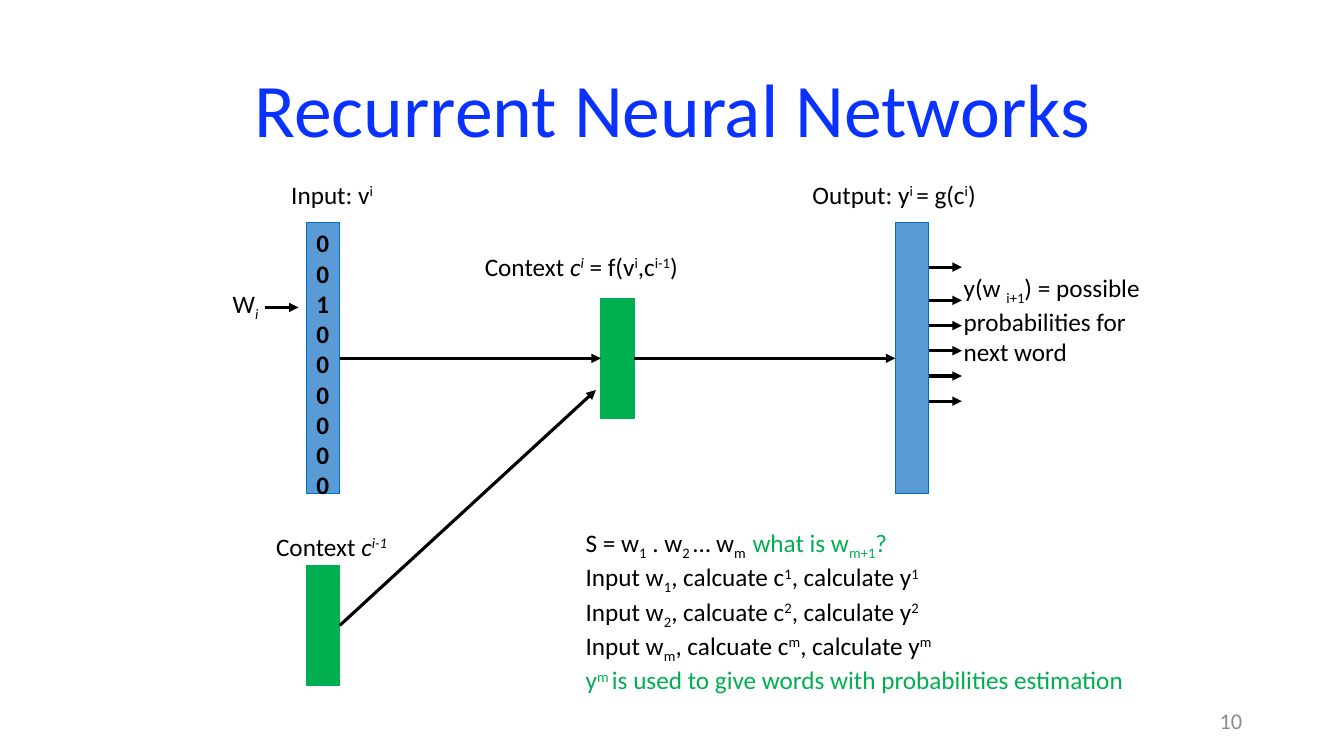
"""Build the Recurrent Neural Networks slide."""
from dataclasses import dataclass

from lxml.etree import SubElement
from pptx import Presentation
from pptx.dml.color import RGBColor
from pptx.enum.shapes import MSO_CONNECTOR, MSO_SHAPE
from pptx.enum.text import MSO_ANCHOR, MSO_AUTO_SIZE, PP_ALIGN
from pptx.oxml.ns import qn
from pptx.util import Pt

PX = 9144
RIGHT, LEFT = 3, 1


@dataclass(frozen=True)
class Theme:
    font: str = "Calibri"
    black: str = "000000"
    title: str = "0A32FF"
    muted: str = "8C8C8C"
    blue: str = "5B9BD5"
    blue_edge: str = "0070C0"
    green: str = "00B050"
    title_size: int = 54
    number_size: int = 16
    body_size: int = 18
    bar_line: float = 0.75
    arrow_line: float = 2.25


T = Theme()
STYLES = {
    "sup": {"base": 30000},
    "sub": {"base": -25000},
    "it": {"italic": True},
    "it sup": {"italic": True, "base": 30000},
    "it sub": {"italic": True, "base": -25000},
    "green": {"color": T.green},
    "green sup": {"color": T.green, "base": 30000},
    "green sub": {"color": T.green, "base": -25000},
    "bold": {"bold": True},
    "title": {"color": T.title, "size": T.title_size},
    "number": {"color": T.muted, "size": T.number_size},
}

TITLE = [[("Recurrent Neural Networks", "title")]]
PAGE = [[("10", "number")]]
TITLE_BOX = (92, 40, 1150, 145)
PAGE_BOX = (942, 695, 300, 40)

INPUT_VECTOR = [[(digits, "bold")] for digits in ("0", "0", "1", "0", "00", "000")]
BAR_W = 33
BARS = {
    "input": (304, 221, 269, T.blue, T.blue_edge),
    "output": (888, 221, 269, T.blue, T.blue_edge),
    "context": (596, 296, 119, T.green, T.green),
    "previous": (304, 561, 119, T.green, T.green),
}
FLOWS = [("input", "context"), ("context", "output")]
CONTEXT_TIP = (591, 387)
WORD_ARROW = (263, 305)
ARROW_W = 33
OUTPUT_ROWS = [265] + [298 + 25 * i for i in range(5)]


def step(n):
    """Return the runs of one calculation step."""
    return [("Input w", ""), (n, "sub"), (", calcuate c", ""), (n, "sup"),
            (", calculate y", ""), (n, "sup")]


LABELS = [
    ((279, 173, 125, 40), [[("Input: v", ""), ("i", "sup")]]),
    ((264, 522, 200, 40), [[("Context ", ""), ("c", "it"), ("i-1", "it sup")]]),
    ((471, 244, 278, 40), [[("Context ", ""), ("c", "it"), ("i", "it sup"),
                            (" = f(v", ""), ("i", "sup"), (",c", ""),
                            ("i-1", "sup"), (")", "")]]),
    ((221, 281, 83, 40), [[("W", ""), ("i", "it sub")]]),
    ((796, 173, 217, 61), [[("Output: y", ""), ("i ", "sup"), ("= g(c", ""),
                            ("i", "sup"), (")", "")]]),
    ((946, 265, 217, 131), [[("y(w ", ""), ("i+1", "sub"),
                             (") = possible probabilities for next word", "")]]),
    ((571, 518, 615, 162), [
        [("S = w", ""), ("1", "sub"), (" . w", ""), ("2 ", "sub"), ("… w", ""),
         ("m  ", "sub"), ("what is w", "green"), ("m+1", "green sub"), ("?", "green")],
        step("1"), step("2"), step("m"),
        [("y", "green"), ("m ", "green sup"),
         ("is used to give words with probabilities estimation", "green")],
    ]),
]


def write(tf, paragraphs, align=PP_ALIGN.LEFT, anchor=MSO_ANCHOR.TOP):
    """Fill a text frame with styled runs."""
    tf.word_wrap = True
    tf.auto_size = MSO_AUTO_SIZE.NONE
    tf.vertical_anchor = anchor
    for i, runs in enumerate(paragraphs):
        p = tf.add_paragraph() if i else tf.paragraphs[0]
        p.alignment = align
        for text, style in runs:
            look = STYLES.get(style, {})
            r = p.add_run()
            r.text = text
            r.font.name = T.font
            r.font.size = Pt(look.get("size", T.body_size))
            r.font.bold = look.get("bold")
            r.font.italic = look.get("italic")
            r.font.color.rgb = RGBColor.from_string(look.get("color", T.black))
            if "base" in look:
                r._r.get_or_add_rPr().set("baseline", str(look["base"]))


def text_box(s, box, paragraphs, **layout):
    """Add a text box."""
    sp = s.shapes.add_textbox(*(v * PX for v in box))
    write(sp.text_frame, paragraphs, **layout)


def bar(s, x, y, h, fill, edge):
    """Add one vector bar."""
    sp = s.shapes.add_shape(MSO_SHAPE.RECTANGLE, x * PX, y * PX, BAR_W * PX, h * PX)
    sp.shadow.inherit = False
    sp.fill.solid()
    sp.fill.fore_color.rgb = RGBColor.from_string(fill)
    sp.line.color.rgb = RGBColor.from_string(edge)
    sp.line.width = Pt(T.bar_line)
    return sp


def arrow(s, start=(0, 0), end=(0, 0), source=None, target=None):
    """Add an arrow between points or bars."""
    c = s.shapes.add_connector(MSO_CONNECTOR.STRAIGHT, *(v * PX for v in start + end))
    if source is not None:
        c.begin_connect(source, RIGHT)
    if target is not None:
        c.end_connect(target, LEFT)
    c.line.color.rgb = RGBColor.from_string(T.black)
    c.line.width = Pt(T.arrow_line)
    SubElement(c.line._get_or_add_ln(), qn("a:tailEnd"), type="triangle")
    SubElement(c._element.spPr, qn("a:effectLst"))


def main():
    """Assemble and save the slide."""
    prs = Presentation()
    prs.slide_width, prs.slide_height = 1333 * PX, 750 * PX
    s = prs.slides.add_slide(prs.slide_layouts[5])

    title = s.shapes.title
    title.left, title.top, title.width, title.height = (v * PX for v in TITLE_BOX)
    write(title.text_frame, TITLE, PP_ALIGN.CENTER, MSO_ANCHOR.MIDDLE)
    title.text_frame.paragraphs[0].line_spacing = 0.9
    text_box(s, PAGE_BOX, PAGE, align=PP_ALIGN.RIGHT, anchor=MSO_ANCHOR.MIDDLE)

    bars = {name: bar(s, *spec) for name, spec in BARS.items()}
    write(bars["input"].text_frame, INPUT_VECTOR)

    for source, target in FLOWS:
        arrow(s, source=bars[source], target=bars[target])
    arrow(s, end=CONTEXT_TIP, source=bars["previous"])
    output_edge = BARS["output"][0] + BAR_W
    for x, y in [WORD_ARROW] + [(output_edge, row) for row in OUTPUT_ROWS]:
        arrow(s, (x, y), (x + ARROW_W, y))

    for box, paragraphs in LABELS:
        text_box(s, box, paragraphs)
    prs.save("out.pptx")


if __name__ == "__main__":
    main()
